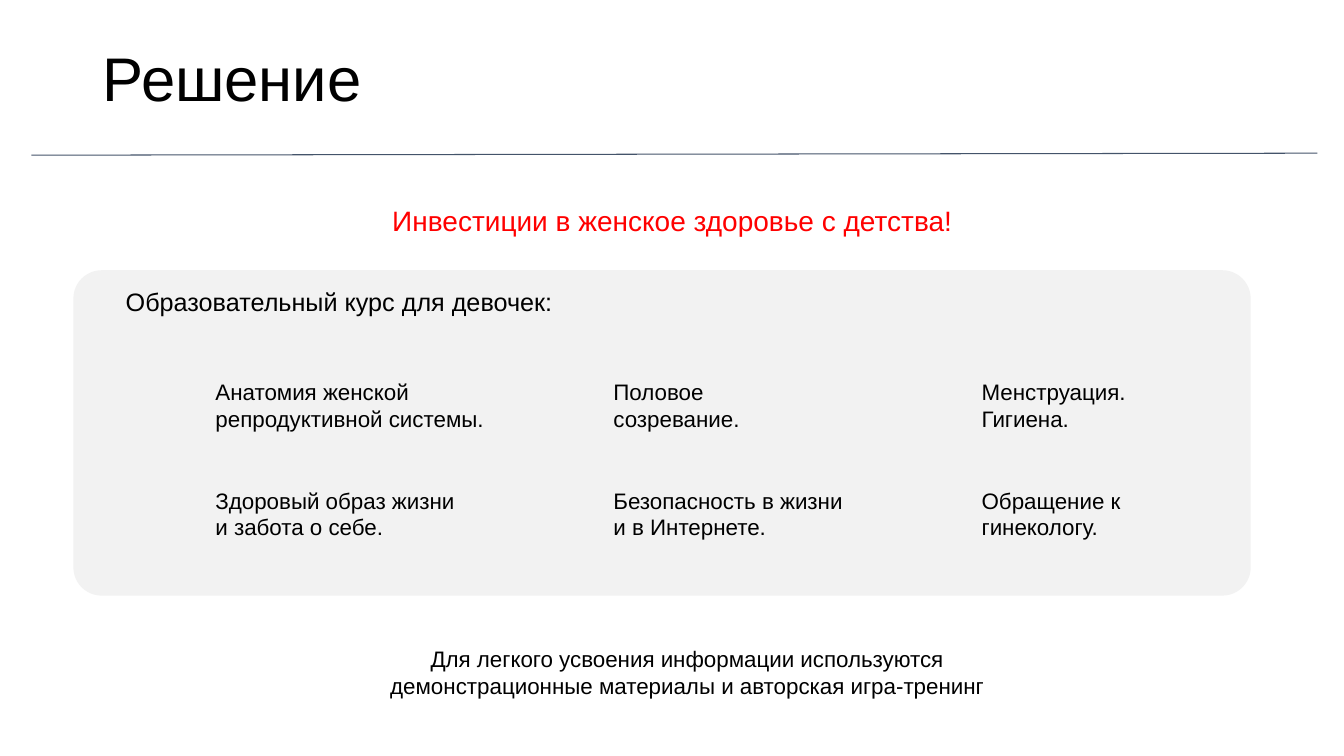
"""Build the slide about a health education course for girls."""
from lxml.etree import SubElement
from pptx import Presentation
from pptx.dml.color import RGBColor
from pptx.enum.shapes import MSO_CONNECTOR, MSO_SHAPE
from pptx.enum.text import MSO_ANCHOR, PP_ALIGN
from pptx.oxml.ns import qn
from pptx.util import Cm, Pt

COLOURS = {"text": "000000", "accent": "FF0000", "panel": "F2F2F2", "rule": "44546A"}
FONT = "Arial"
COLUMN_LEFTS = (5.18, 15.21, 24.49)
ROW_TOPS = (9.4, 12.14)
TOPICS = (
    (
        ("Анатомия женской репродуктивной системы.", 7.85),
        ("Половое созревание.", 5.23),
        ("Менструация. Гигиена.", 5.23),
    ),
    (
        ("Здоровый образ жизни и забота о себе.", 6.83),
        ("Безопасность в жизни и в Интернете.", 6.5),
        ("Обращение к гинекологу.", 4.01),
    ),
)


def colour(name):
    """Return the named colour."""
    return RGBColor.from_string(COLOURS[name])


def apply_format(target, values):
    """Set every attribute in values on the target."""
    for name, value in values.items():
        setattr(target, name, value)


def add_text(slide, text, box, size=16, colour_name="text", frame=None, layout=None):
    """Add a one-paragraph text box; box is left, top, width, height in cm."""
    shape = slide.shapes.add_textbox(*map(Cm, box))
    apply_format(shape.text_frame, {"word_wrap": True, **(frame or {})})
    paragraph = shape.text_frame.paragraphs[0]
    apply_format(paragraph, layout or {})
    run = paragraph.add_run()
    run.text = text
    apply_format(run.font, {"name": FONT, "size": Pt(size)})
    run.font.color.rgb = colour(colour_name)


def add_panel(slide, box):
    """Add the rounded panel behind the course topics."""
    panel = slide.shapes.add_shape(MSO_SHAPE.ROUNDED_RECTANGLE, *map(Cm, box))
    panel.adjustments[0] = 0.087
    panel.shadow.inherit = False
    panel.fill.solid()
    panel.fill.fore_color.rgb = colour("panel")
    panel.line.fill.background()


def add_rule(slide, ends):
    """Add the thin line under the title."""
    rule = slide.shapes.add_connector(MSO_CONNECTOR.STRAIGHT, *map(Cm, ends))
    rule.line.color.rgb = colour("rule")
    rule.line.width = Pt(0.75)
    SubElement(rule._element.spPr, qn("a:effectLst"))


def add_topics(slide):
    """Place the course topics on their grid."""
    for top, row in zip(ROW_TOPS, TOPICS):
        for left, (text, width) in zip(COLUMN_LEFTS, row):
            add_text(slide, text, (left, top, width, 1.63))


def main():
    """Build and save the presentation."""
    presentation = Presentation()
    apply_format(presentation, {"slide_width": Cm(33.87), "slide_height": Cm(19.05)})
    slide = presentation.slides.add_slide(presentation.slide_layouts[6])
    centred = {"alignment": PP_ALIGN.CENTER}

    add_panel(slide, (1.85, 6.81, 29.67, 8.2))
    add_text(slide, "Решение", (2.34, 1.02, 28.52, 2.01), size=44,
             frame={"vertical_anchor": MSO_ANCHOR.BOTTOM}, layout={"line_spacing": 0.9})
    add_text(slide, "Инвестиции в женское здоровье с детства!", (2.34, 4.57, 29.21, 1.7),
             size=20, colour_name="accent", layout={**centred, "line_spacing": 1.5})
    add_rule(slide, (0.79, 3.91, 33.2, 3.86))
    add_text(slide, "Образовательный курс для девочек:", (2.92, 7.09, 11.46, 1.02),
             size=18, frame={"word_wrap": False})
    add_topics(slide)
    add_text(slide, "Для легкого усвоения информации используются "
             "демонстрационные материалы и авторская игра-тренинг",
             (8.15, 16.13, 18.34, 1.63), layout=centred)
    presentation.save("out.pptx")


if __name__ == "__main__":
    main()
